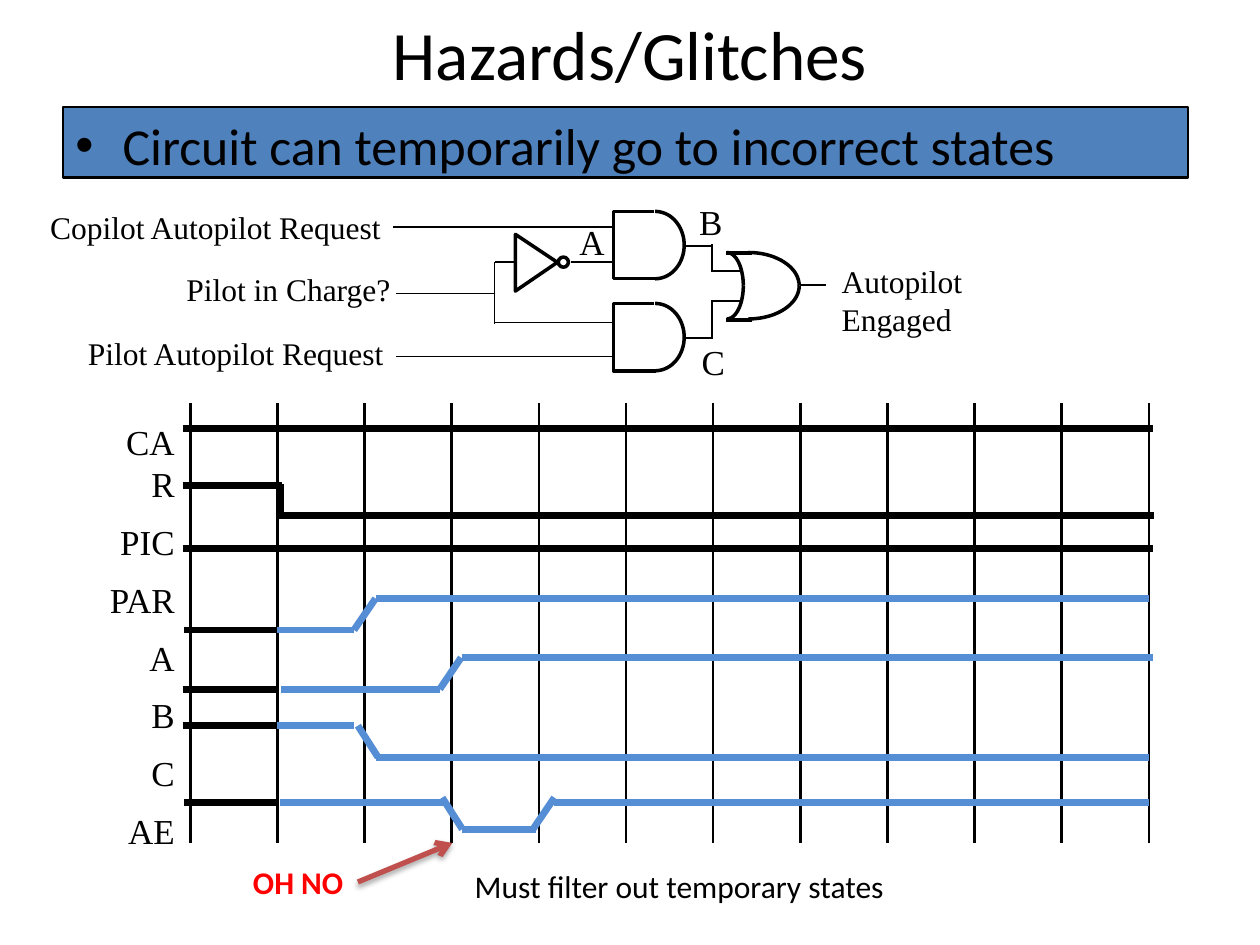
"""Build the Hazards/Glitches slide: logic circuit above its timing diagram."""
import math
from typing import NamedTuple

from lxml import etree
from pptx import Presentation
from pptx import util as u
from pptx.dml.color import RGBColor
from pptx.enum import shapes, text
from pptx.oxml import ns

BLACK = RGBColor(0x00, 0x00, 0x00)
RED = RGBColor(0xFF, 0x00, 0x00)
BANNER_BLUE = RGBColor(0x4F, 0x81, 0xBD)
SIGNAL_BLUE = RGBColor(0x55, 0x8E, 0xD5)
ARROW_RED = RGBColor(0xC0, 0x50, 0x4D)
SANS, SERIF = "Calibri", "Times New Roman"
LEFT, CENTER, RIGHT = text.PP_ALIGN.LEFT, text.PP_ALIGN.CENTER, text.PP_ALIGN.RIGHT


class Label(NamedTuple):
    words: str
    left: float
    top: float
    width: float
    height: float
    size: float = 18
    font: str = SERIF
    color: RGBColor = BLACK
    bold: bool = False
    align: text.PP_ALIGN = LEFT
    wrap: bool = False
    spacing: float = 0


class Stroke(NamedTuple):
    x1: float
    y1: float
    x2: float
    y2: float


class Arc(NamedTuple):
    center_x: float
    center_y: float
    radius_x: float
    radius_y: float


LABELS = [
    Label("Copilot Autopilot Request", 21.6, 115.2, 204.5, 29),
    Label("Pilot Autopilot Request", 43.2, 187.2, 184.3, 29),
    Label("Pilot in Charge?", 99.4, 150.5, 131, 29),
    Label("Autopilot Engaged", 473.8, 146.2, 150.5, 29),
    Label("A", 324, 122.4, 28.8, 31, 20),
    Label("B", 392.4, 110.9, 27.4, 31, 20),
    Label("C", 393.8, 190.8, 27.4, 31, 20),
    Label("CAR\nPIC\nPAR\nA\nB\nC\nAE", 52, 236.9, 55, 236.9, 20,
          align=RIGHT, wrap=True, spacing=4.5),
    Label("Must filter out temporary states", 264.2, 491.8, 250.6, 29, font=SANS),
    Label("OH NO", 137.5, 489.6, 67, 29, font=SANS, color=RED, bold=True),
]

WIRES = [
    Stroke(391.7, 140.4, 407.5, 140.4), Stroke(457.2, 162.7, 472.3, 162.7),
    Stroke(407.5, 154.8, 423.4, 154.8), Stroke(406.8, 172.1, 422.6, 172.1),
    Stroke(326.2, 149.8, 350.6, 149.8), Stroke(283, 149.8, 294.5, 149.8),
    Stroke(390.2, 193, 406.8, 193), Stroke(334.8, 203.8, 349.9, 203.8),
    Stroke(351.4, 184.3, 282.2, 184.3), Stroke(282.6, 149.8, 282.6, 185),
    Stroke(283, 167.8, 226.1, 167.8), Stroke(350.6, 129.6, 224.6, 129.6),
    Stroke(342.7, 203.8, 226.1, 203.8), Stroke(406.8, 139.7, 406.8, 155.5),
    Stroke(406.8, 171.4, 406.8, 193.7),
]

OR_EDGES = [Stroke(429.8, y, 414.7, y) for y in (144.7, 182.9)]

GRID = [Stroke(108.7 + 49.8 * i, 230.4, 108.7 + 49.8 * i, 481.7) for i in range(12)]

BLACK_SIGNALS = [
    Stroke(104.4, 244.8, 658.8, 244.8), Stroke(104.4, 277.2, 161.3, 277.2),
    Stroke(160.2, 276.5, 160.2, 295.2), Stroke(158.4, 294.5, 659.5, 294.5),
    Stroke(104.4, 313.2, 658.8, 313.2), Stroke(105.1, 360, 159.8, 360),
    Stroke(104.4, 393.8, 158.4, 393.8), Stroke(104.4, 414.7, 161.3, 414.7),
    Stroke(105.1, 458.6, 158.4, 458.6),
]

BLUE_SIGNALS = [
    Stroke(158.4, 360, 202.3, 360), Stroke(202.3, 360, 214.6, 342),
    Stroke(214.6, 342, 656.6, 342),
    Stroke(160.6, 393.8, 251.3, 393.8), Stroke(251.3, 393.8, 263.5, 375.8),
    Stroke(264.2, 375.8, 658.8, 375.8),
    Stroke(158.4, 414.7, 202.3, 414.7), Stroke(204.5, 414.7, 216, 432.7),
    Stroke(214.6, 432.7, 656.6, 432.7),
    Stroke(159.8, 458.6, 254.2, 458.6), Stroke(252.7, 455.8, 264.2, 473.8),
    Stroke(264.2, 473.8, 306, 473.8), Stroke(304.6, 473.8, 316.8, 455.8),
    Stroke(316.8, 458.6, 656.6, 458.6),
]


def add_label(slide, label: Label):
    box = slide.shapes.add_textbox(*map(u.Pt, label[1:5]))
    frame = box.text_frame
    frame.text = label.words
    frame.word_wrap = label.wrap
    for para in frame.paragraphs:
        para.alignment = label.align
        para.space_before = para.space_after = u.Pt(label.spacing)
        for span in para.runs:
            span.font.size = u.Pt(label.size)
            span.font.name = label.font
            span.font.bold = label.bold
            span.font.color.rgb = label.color
    return box


def add_stroke(slide, stroke: Stroke, width: float, color: RGBColor = BLACK):
    line = slide.shapes.add_connector(shapes.MSO_CONNECTOR.STRAIGHT, *map(u.Pt, stroke))
    line.line.width = u.Pt(width)
    line.line.color.rgb = color
    etree.SubElement(line._element.spPr, ns.qn("a:effectLst"))
    return line


def style_outline(shape, width: float = 2) -> None:
    shape.shadow.inherit = False
    shape.fill.background()
    shape.line.color.rgb = BLACK
    shape.line.width = u.Pt(width)


def add_outline(slide, points: list[tuple[float, float]], close: bool = False) -> None:
    corners = [(u.Pt(x), u.Pt(y)) for x, y in points]
    builder = slide.shapes.build_freeform(*corners[0])
    builder.add_line_segments(corners[1:], close=close)
    style_outline(builder.convert_to_shape())


def add_arc(slide, arc: Arc) -> None:
    angles = [math.radians(step * 5) for step in range(19)]
    add_outline(slide, [(arc.center_x + arc.radius_x * math.sin(angle),
                         arc.center_y - arc.radius_y * math.cos(angle))
                        for angle in angles])


def add_and_gate(slide, top: float) -> None:
    bottom = top + 38.5
    add_outline(slide, [(374, top), (350.6, top), (350.6, bottom), (375.1, bottom)])
    for radius in (19.25, -19.25):
        add_arc(slide, Arc(374.4, top + 19.25, 16.6, radius))


def add_or_gate(slide) -> None:
    for center_x, radius_x in ((415.4, 9.4), (427.7, 29)):
        for radius_y in (19, -19):
            add_arc(slide, Arc(center_x, 163.3, radius_x, radius_y))
    for edge in OR_EDGES:
        add_stroke(slide, edge, 2)


def add_inverter(slide) -> None:
    add_outline(slide, [(318.5, 149.9), (294.5, 133.9), (294.5, 166.3)], close=True)
    bubble = slide.shapes.add_shape(
        shapes.MSO_SHAPE.OVAL, *map(u.Pt, (319, 146.9, 5.8, 5.8)))
    style_outline(bubble)


def add_banner(slide) -> None:
    banner = add_label(slide, Label("Circuit can temporarily go to incorrect states",
                                    36, 61.2, 643, 40.3, 29.6, SANS, wrap=True, spacing=2))
    banner.fill.solid()
    banner.fill.fore_color.rgb = BANNER_BLUE
    banner.line.color.rgb = BLACK
    banner.line.width = u.Pt(1.5)
    properties = banner.text_frame.paragraphs[0]._p.get_or_add_pPr()
    properties.set("marL", str(u.Pt(27)))
    properties.set("indent", str(u.Pt(-27)))
    etree.SubElement(properties, ns.qn("a:buFont"), typeface="Arial")
    etree.SubElement(properties, ns.qn("a:buChar"), char="•")


def add_warning_arrow(slide) -> None:
    arrow = add_stroke(slide, Stroke(204.5, 504, 258.5, 481.7), 3, ARROW_RED)
    etree.SubElement(arrow.line._get_or_add_ln(), ns.qn("a:tailEnd"), type="arrow")
    effects = arrow._element.spPr.find(ns.qn("a:effectLst"))
    shadow = etree.SubElement(effects, ns.qn("a:outerShdw"), blurRad=str(u.Pt(3.1)),
                              dist=str(u.Pt(1.8)), dir="5400000", rotWithShape="0")
    tint = etree.SubElement(shadow, ns.qn("a:srgbClr"), val=str(BLACK))
    etree.SubElement(tint, ns.qn("a:alpha"), val="35000")


def main() -> None:
    deck = Presentation()
    deck.slide_width, deck.slide_height = u.Pt(720), u.Pt(540)
    page = deck.slides.add_slide(deck.slide_layouts[6])
    add_banner(page)
    title = add_label(page, Label("Hazards/Glitches", 36, 0, 648, 57.6, 39.6, SANS,
                                  align=CENTER, wrap=True))
    title.text_frame.vertical_anchor = text.MSO_ANCHOR.BOTTOM
    for top in (120.8, 173.4):
        add_and_gate(page, top)
    add_or_gate(page)
    add_inverter(page)
    for strokes, width, color in ((WIRES, 1, BLACK), (GRID, 1.5, BLACK),
                                  (BLACK_SIGNALS, 4, BLACK), (BLUE_SIGNALS, 4, SIGNAL_BLUE)):
        for stroke in strokes:
            add_stroke(page, stroke, width, color)
    for label in LABELS:
        add_label(page, label)
    add_warning_arrow(page)
    deck.save("out.pptx")


if __name__ == "__main__":
    main()
